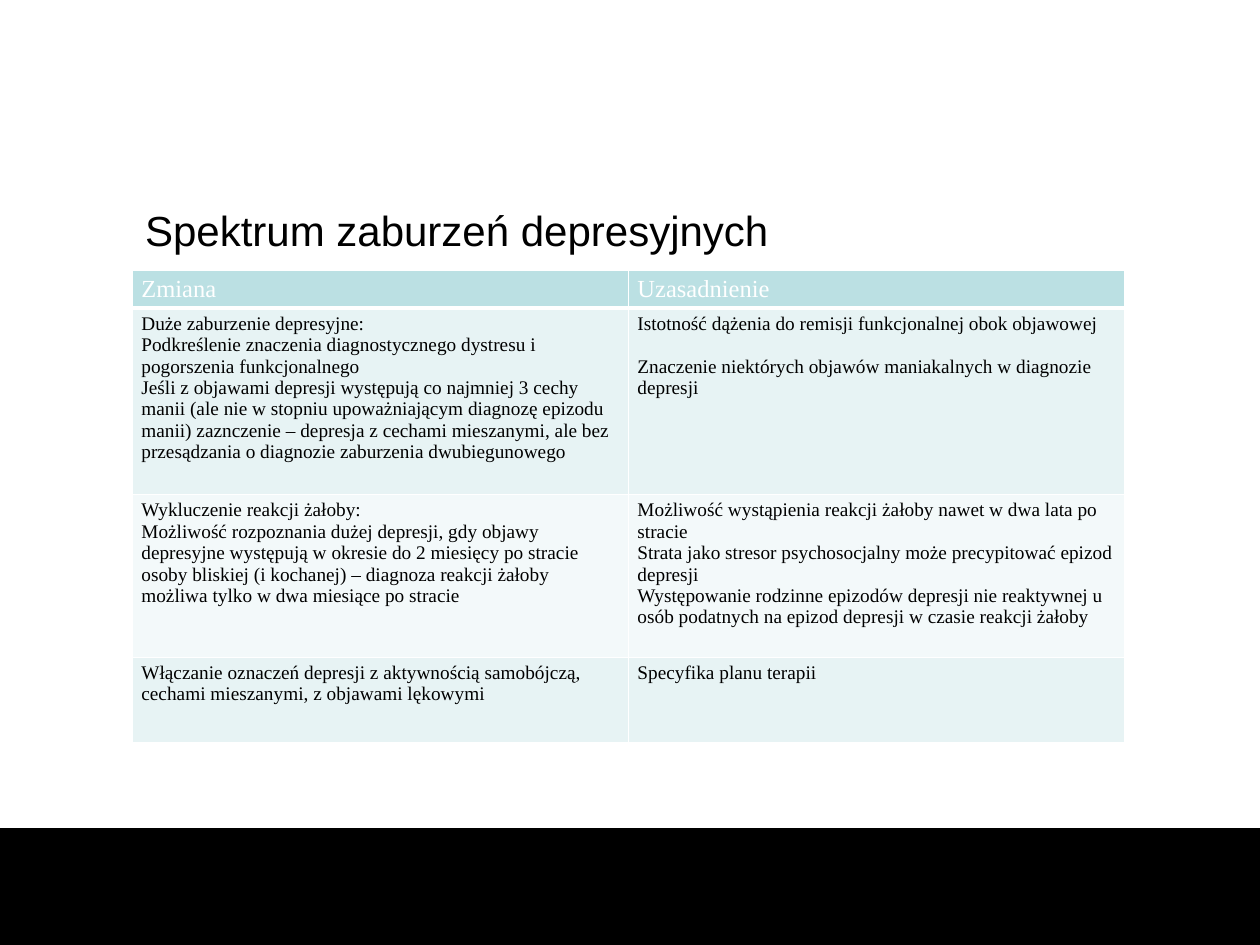
from lxml import etree
from pptx import Presentation
from pptx import util as u
from pptx.dml.color import RGBColor
from pptx.enum import shapes, text
from pptx.oxml import ns

BLACK = RGBColor(0x00, 0x00, 0x00)
WHITE = RGBColor(0xFF, 0xFF, 0xFF)
HEADER = RGBColor(0xBB, 0xE0, 0xE3)
BAND_DARK = RGBColor(0xE7, 0xF3, 0xF4)
BAND_LIGHT = RGBColor(0xF3, 0xF9, 0xFA)

TITLE = "Spektrum zaburzeń depresyjnych"
CHANGES = [
    (["Zmiana"], ["Uzasadnienie"]),
    (
        [
            "Duże zaburzenie depresyjne:",
            "Podkreślenie znaczenia diagnostycznego dystresu i pogorszenia funkcjonalnego",
            "Jeśli z objawami depresji występują co najmniej 3 cechy manii (ale nie w stopniu "
            "upoważniającym diagnozę epizodu manii) zaznczenie – depresja z cechami mieszanymi, "
            "ale bez przesądzania o diagnozie zaburzenia dwubiegunowego",
        ],
        [
            "Istotność dążenia do remisji funkcjonalnej obok objawowej",
            "Znaczenie niektórych objawów maniakalnych w diagnozie depresji",
        ],
    ),
    (
        [
            "Wykluczenie reakcji żałoby:",
            "Możliwość rozpoznania dużej depresji, gdy objawy depresyjne występują w okresie "
            "do 2 miesięcy po stracie osoby bliskiej (i kochanej) – diagnoza reakcji żałoby "
            "możliwa tylko w dwa miesiące po stracie",
        ],
        [
            "Możliwość wystąpienia reakcji żałoby nawet w dwa lata po stracie",
            "Strata jako stresor psychosocjalny może precypitować epizod depresji",
            "Występowanie rodzinne epizodów depresji nie reaktywnej u osób podatnych na epizod "
            "depresji w czasie reakcji żałoby",
        ],
    ),
    (
        ["Włączanie oznaczeń depresji z aktywnością samobójczą, cechami mieszanymi, z objawami lękowymi"],
        ["Specyfika planu terapii"],
    ),
]
ROW_HEIGHTS = [0.76, 3.76, 3.28, 1.72]
SPACED_CELL = (1, 1)


def write(frame, lines, font="Times New Roman", size=11, color=BLACK, gap=0):
    for index, line in enumerate(lines):
        paragraph = frame.paragraphs[0] if index == 0 else frame.add_paragraph()
        paragraph.alignment = text.PP_ALIGN.LEFT
        if index and gap:
            paragraph.space_before = u.Pt(gap)
        run = paragraph.add_run()
        run.text = line
        run.font.name = font
        run.font.size = u.Pt(size)
        run.font.color.rgb = color


def set_borders(cell, bottom):
    properties = cell._tc.get_or_add_tcPr()
    widths = {"a:lnL": 1, "a:lnR": 1, "a:lnT": 1, "a:lnB": bottom}
    for position, (side, width) in enumerate(widths.items()):
        border = etree.Element(ns.qn(side), w=str(u.Pt(width)))
        fill = etree.SubElement(border, ns.qn("a:solidFill"))
        etree.SubElement(fill, ns.qn("a:srgbClr"), val=str(WHITE))
        properties.insert(position, border)


class Deck:
    def __init__(self):
        self.presentation = Presentation()
        self.presentation.slide_width = u.Cm(25.4)
        self.presentation.slide_height = u.Cm(19.05)
        self.slide = self.presentation.slides.add_slide(self.presentation.slide_layouts[5])

    def footer_band(self, left, top, width, height):
        band = self.slide.shapes.add_shape(
            shapes.MSO_SHAPE.RECTANGLE, u.Cm(left), u.Cm(top), u.Cm(width), u.Cm(height))
        band.shadow.inherit = False
        band.fill.solid()
        band.fill.fore_color.rgb = BLACK
        band.line.color.rgb = BLACK
        band.line.width = u.Pt(0.75)

    def title(self, heading, left, top, width, height):
        title = self.slide.shapes.title
        title.left, title.top = u.Cm(left), u.Cm(top)
        title.width, title.height = u.Cm(width), u.Cm(height)
        title.text_frame.vertical_anchor = text.MSO_ANCHOR.MIDDLE
        write(title.text_frame, [heading], font="Arial", size=24)

    def table(self, rows, heights, left, top, width):
        table = self.slide.shapes.add_table(
            len(rows), len(rows[0]), u.Cm(left), u.Cm(top), u.Cm(width), u.Cm(sum(heights))).table
        for row, height in zip(table.rows, heights):
            row.height = u.Cm(height)
        for r, row in enumerate(rows):
            for c, lines in enumerate(row):
                self.cell(table.cell(r, c), lines, r, gap=12.3 if (r, c) == SPACED_CELL else 0)

    def cell(self, cell, lines, row, gap):
        header = row == 0
        cell.margin_left = cell.margin_right = u.Cm(0.18)
        cell.margin_top = cell.margin_bottom = u.Cm(0.1)
        cell.fill.solid()
        cell.fill.fore_color.rgb = HEADER if header else BAND_DARK if row % 2 else BAND_LIGHT
        set_borders(cell, bottom=3 if header else 1)
        write(cell.text_frame, lines, size=14 if header else 11,
              color=WHITE if header else BLACK, gap=gap)


def main():
    deck = Deck()
    deck.footer_band(0, 16.71, 25.4, 2.34)
    deck.title(TITLE, 2.67, 3.28, 20, 2.72)
    deck.table(CHANGES, ROW_HEIGHTS, 2.67, 5.45, 20)
    deck.presentation.save("out.pptx")


if __name__ == "__main__":
    main()
